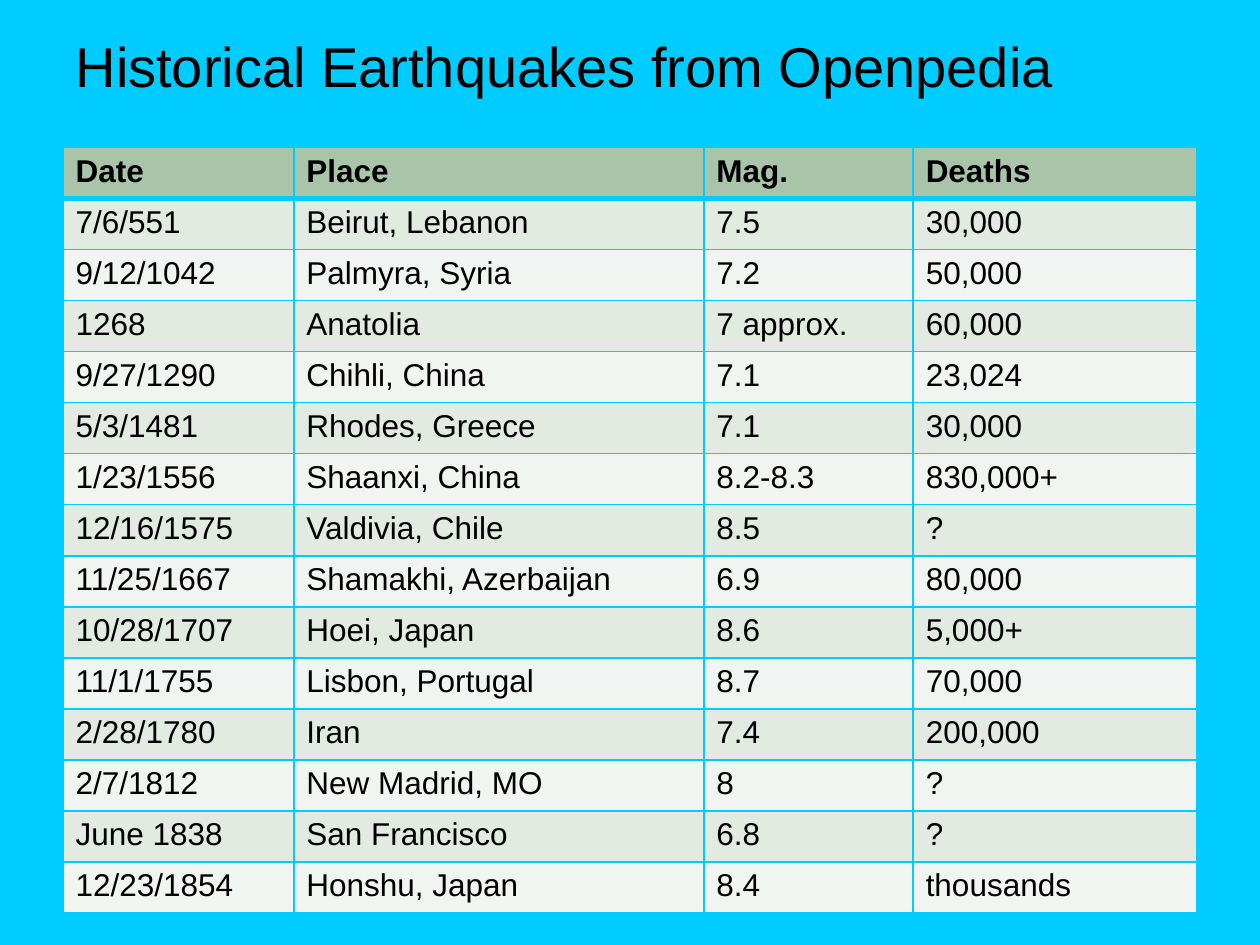
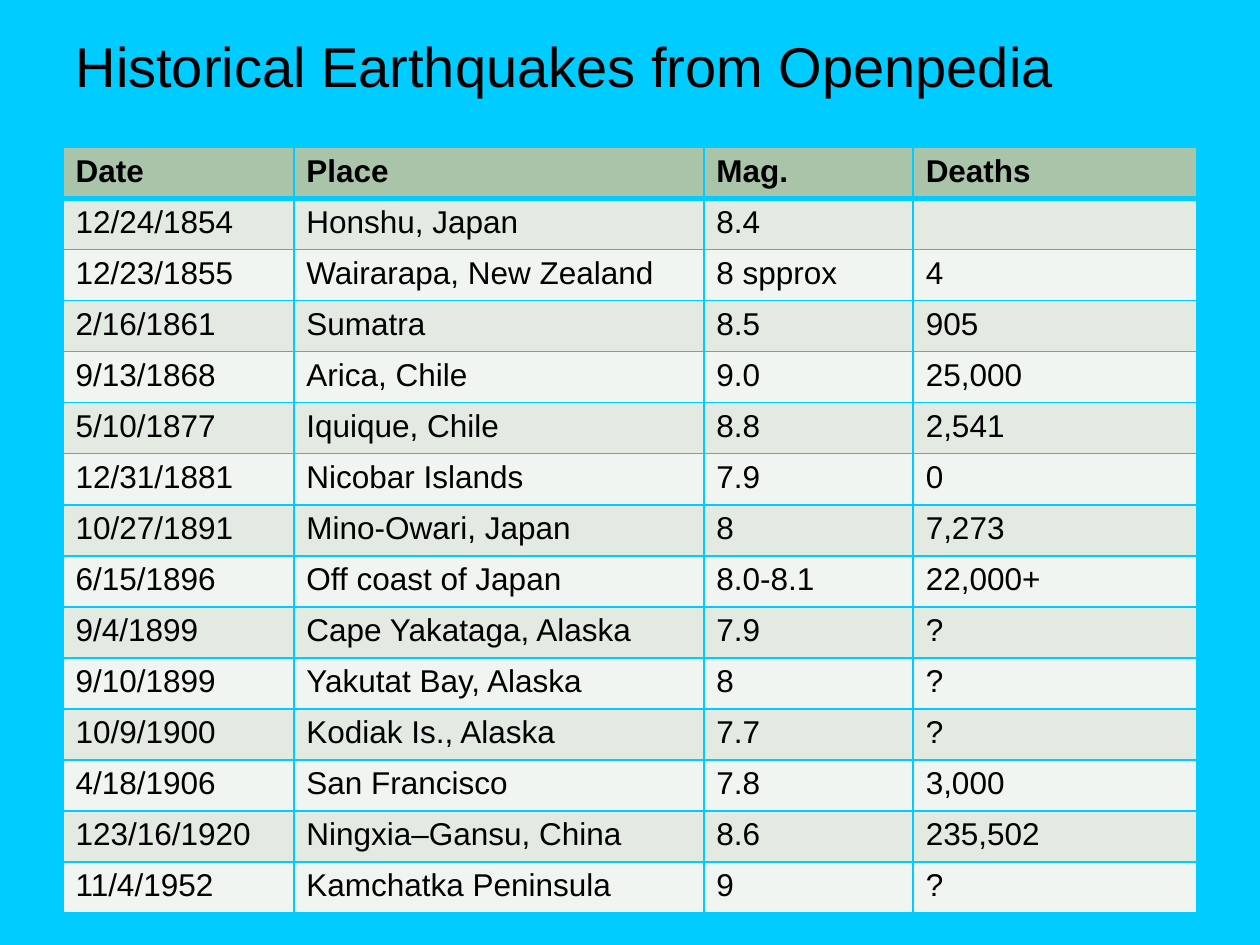
from dataclasses import dataclass

from lxml import etree
from pptx import Presentation
from pptx import util as u
from pptx.dml import color
from pptx.enum import text
from pptx.oxml import ns


@dataclass(frozen=True)
class Theme:
    font: str = "Arial"
    background: str = "00CCFF"
    ink: str = "000000"
    header: str = "AAC4AA"
    bands: tuple = ("E2EAE2", "F1F5F1")
    title_size: int = 32
    cell_size: int = 18
    thin_rule: int = 1
    header_rule: int = 3


THEME = Theme()
TITLE = "Historical Earthquakes from Openpedia"
TITLE_BOX = (0.5, 0.02, 9, 0.81)
TABLE_BOX = (0.5, 1.17, 9, 6.08)
HEADINGS = ("Date", "Place", "Mag.", "Deaths")
COLUMN_SHARES = (1.83, 3.25, 1.66, 2.25)

QUAKES_TO_1854 = [
    ("7/6/551", "Beirut, Lebanon", "7.5", "30,000"),
    ("9/12/1042", "Palmyra, Syria", "7.2", "50,000"),
    ("1268", "Anatolia", "7 approx.", "60,000"),
    ("9/27/1290", "Chihli, China", "7.1", "23,024"),
    ("5/3/1481", "Rhodes, Greece", "7.1", "30,000"),
    ("1/23/1556", "Shaanxi, China", "8.2-8.3", "830,000+"),
    ("12/16/1575", "Valdivia, Chile", "8.5", "?"),
    ("11/25/1667", "Shamakhi, Azerbaijan", "6.9", "80,000"),
    ("10/28/1707", "Hoei, Japan", "8.6", "5,000+"),
    ("11/1/1755", "Lisbon, Portugal", "8.7", "70,000"),
    ("2/28/1780", "Iran", "7.4", "200,000"),
    ("2/7/1812", "New Madrid, MO", "8", "?"),
    ("June 1838", "San Francisco", "6.8", "?"),
    ("12/23/1854", "Honshu, Japan", "8.4", "thousands"),
]

QUAKES_TO_1952 = [
    ("12/24/1854", "Honshu, Japan", "8.4", ""),
    ("12/23/1855", "Wairarapa, New Zealand", "8 spprox", "4"),
    ("2/16/1861", "Sumatra", "8.5", "905"),
    ("9/13/1868", "Arica, Chile", "9.0", "25,000"),
    ("5/10/1877", "Iquique, Chile", "8.8", "2,541"),
    ("12/31/1881", "Nicobar Islands", "7.9", "0"),
    ("10/27/1891", "Mino-Owari, Japan", "8", "7,273"),
    ("6/15/1896", "Off coast of Japan", "8.0-8.1", "22,000+"),
    ("9/4/1899", "Cape Yakataga, Alaska", "7.9", "?"),
    ("9/10/1899", "Yakutat Bay, Alaska", "8", "?"),
    ("10/9/1900", "Kodiak Is., Alaska", "7.7", "?"),
    ("4/18/1906", "San Francisco", "7.8", "3,000"),
    ("123/16/1920", "Ningxia–Gansu, China", "8.6", "235,502"),
    ("11/4/1952", "Kamchatka Peninsula", "9", "?"),
]


def paint(fill, tone):
    fill.solid()
    fill.fore_color.rgb = color.RGBColor.from_string(tone)


def write(frame, words, size=THEME.cell_size, bold=False):
    para = frame.paragraphs[0]
    para.alignment = text.PP_ALIGN.LEFT
    para.font.size = u.Pt(size)
    if words:
        span = para.add_run()
        span.text = words
        span.font.name = THEME.font
        span.font.size = u.Pt(size)
        span.font.bold = bold
        span.font.color.rgb = color.RGBColor.from_string(THEME.ink)


def rule_cell(cell, top, bottom):
    properties = cell._tc.get_or_add_tcPr()
    widths = {"lnL": THEME.thin_rule, "lnR": THEME.thin_rule, "lnT": top, "lnB": bottom}
    for place, (side, width) in enumerate(widths.items()):
        line = etree.Element(ns.qn(f"a:{side}"), w=str(u.Pt(width)))
        fill = etree.SubElement(line, ns.qn("a:solidFill"))
        etree.SubElement(fill, ns.qn("a:srgbClr"), val=THEME.background)
        properties.insert(place, line)


def add_title(page, box, words):
    title = page.shapes.title
    title.left, title.top, title.width, title.height = map(u.Inches, box)
    frame = title.text_frame
    frame.word_wrap = True
    frame.auto_size = text.MSO_AUTO_SIZE.NONE
    frame.vertical_anchor = text.MSO_ANCHOR.BOTTOM
    write(frame, words, size=THEME.title_size)


def add_quake_table(page, box, quakes):
    rows = [HEADINGS, *quakes]
    table = page.shapes.add_table(len(rows), len(HEADINGS), *map(u.Inches, box)).table
    for column, share in zip(table.columns, COLUMN_SHARES):
        column.width = u.Inches(box[2] * share / sum(COLUMN_SHARES))
    for index, row in enumerate(rows):
        heading = index == 0
        tone = THEME.header if heading else THEME.bands[(index - 1) % 2]
        top = THEME.header_rule if index == 1 else THEME.thin_rule
        bottom = THEME.header_rule if heading else THEME.thin_rule
        for column, words in enumerate(row):
            cell = table.cell(index, column)
            paint(cell.fill, tone)
            rule_cell(cell, top, bottom)
            write(cell.text_frame, words, bold=heading)


def add_quake_page(deck, quakes):
    page = deck.slides.add_slide(deck.slide_layouts.get_by_name("Title Only"))
    add_title(page, TITLE_BOX, TITLE)
    add_quake_table(page, TABLE_BOX, quakes)


def main():
    deck = Presentation()
    deck.slide_width, deck.slide_height = u.Inches(10), u.Inches(7.5)
    paint(deck.slide_master.background.fill, THEME.background)
    for quakes in (QUAKES_TO_1854, QUAKES_TO_1952):
        add_quake_page(deck, quakes)
    deck.save("out.pptx")


if __name__ == "__main__":
    main()
